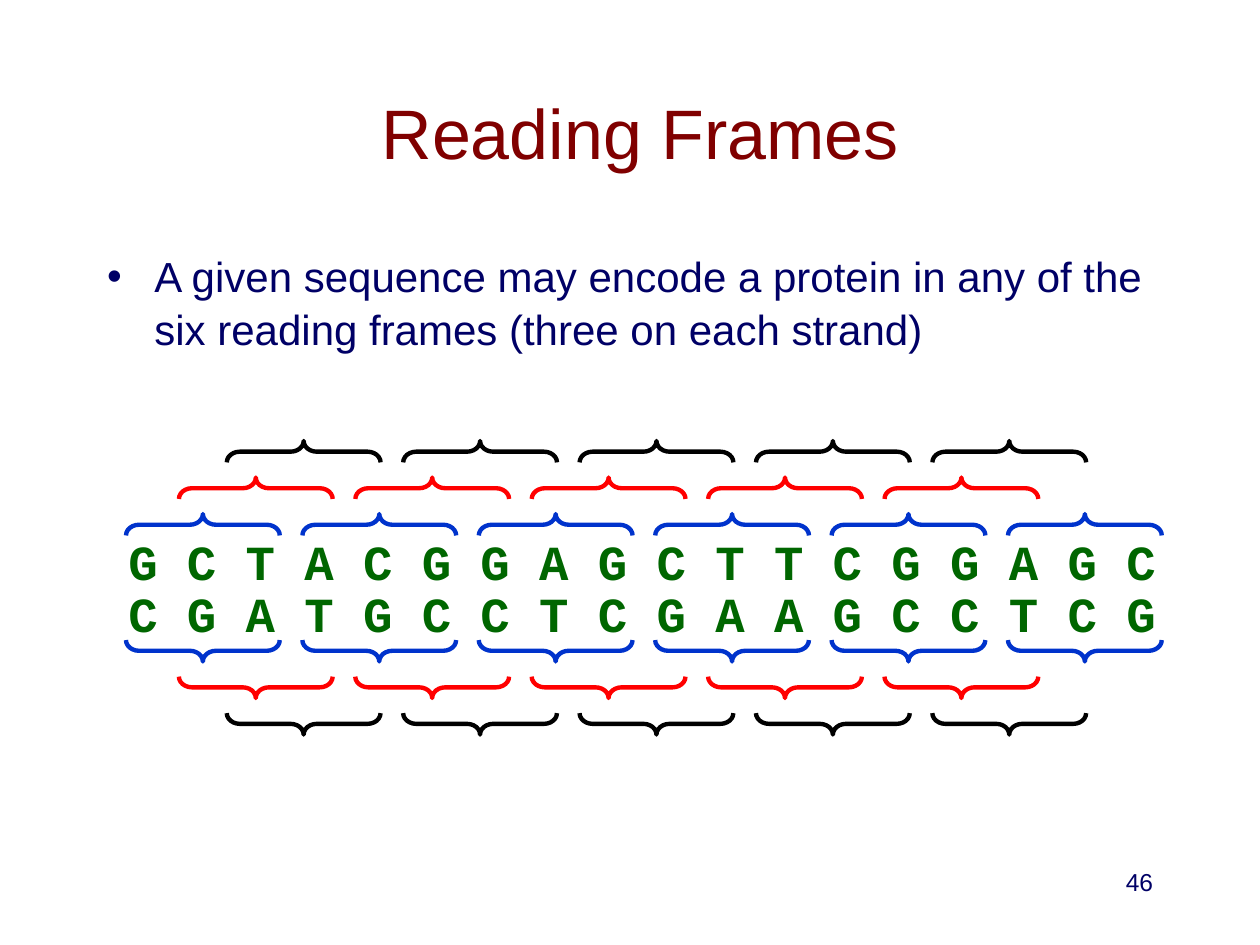
from collections import namedtuple
from pptx import Presentation
from pptx.dml.color import RGBColor
from pptx.enum.shapes import MSO_SHAPE
from pptx.enum.text import MSO_ANCHOR, MSO_AUTO_SIZE, PP_ALIGN
from pptx.util import Inches, Pt

Box = namedtuple("Box", "left top width height")
Frame = namedtuple("Frame", "color offset count")

COLORS = {
    "title": "800000",
    "body": "000066",
    "bases": "006600",
    "first": "0033CC",
    "second": "FF0000",
    "third": "000000",
}
STRANDS = ["G C T A C G G A G C T T C G G A G C", "C G A T G C C T C G A A G C C T C G"]
STRAND_GAP = 0.41
CODON_WIDTH = 1.4
FRAMES = [Frame("first", 0, 6), Frame("second", 0.42, 5), Frame("third", 0.8, 5)]
FRAME_GAP = 0.29
BRACE_LENGTH = 1.22
BRACE_DEPTH = 0.17


def place(shape, box):
    shape.left, shape.top, shape.width, shape.height = map(Inches, box)


def write_text(shape, text, size, color, font="Arial", bold=False, align=PP_ALIGN.LEFT,
               anchor=MSO_ANCHOR.TOP, wrap=True, line_spacing=None):
    frame = shape.text_frame
    frame.auto_size = MSO_AUTO_SIZE.NONE
    frame.word_wrap = wrap
    frame.vertical_anchor = anchor
    paragraph = frame.paragraphs[0]
    paragraph.alignment = align
    paragraph.line_spacing = line_spacing
    run = paragraph.add_run()
    run.text = text
    run.font.size = Pt(size)
    run.font.name = font
    run.font.bold = bold
    run.font.color.rgb = RGBColor.from_string(COLORS[color])


def fill_title(slide, box):
    place(slide.shapes.title, box)
    write_text(slide.shapes.title, "Reading Frames", 40, "title",
               align=PP_ALIGN.CENTER, anchor=MSO_ANCHOR.MIDDLE)


def fill_body(slide, box):
    body = slide.placeholders[1]
    place(body, box)
    write_text(body, "A given sequence may encode a protein in any of the six reading frames "
               "(three on each strand)", 24, "body", line_spacing=1.05)


def add_brace(group, center_x, center_y, rotation, color):
    brace = group.shapes.add_shape(
        MSO_SHAPE.LEFT_BRACE,
        Inches(center_x - BRACE_DEPTH / 2), Inches(center_y - BRACE_LENGTH / 2),
        Inches(BRACE_DEPTH), Inches(BRACE_LENGTH))
    brace.rotation = rotation
    brace.adjustments[0] = 0.608
    brace.shadow.inherit = False
    brace.fill.background()
    brace.line.color.rgb = RGBColor.from_string(COLORS[color])
    brace.line.width = Pt(2.5)


def add_sequence(slide, box):
    group = slide.shapes.add_group_shape()
    strands_top = box.top + 0.67
    for row, bases in enumerate(STRANDS):
        strand = group.shapes.add_textbox(
            Inches(box.left), Inches(strands_top + row * STRAND_GAP),
            Inches(box.width), Inches(0.57))
        write_text(strand, bases, 28, "bases", font="Courier New", bold=True, wrap=False)
    first_center = box.left + 0.69
    edges = [(box.top + BRACE_DEPTH / 2, 90, 1), (box.top + box.height - BRACE_DEPTH / 2, 270, -1)]
    for edge, rotation, direction in edges:
        for level, frame in enumerate(FRAMES):
            steps_inward = len(FRAMES) - 1 - level
            center_y = edge + direction * steps_inward * FRAME_GAP
            for codon in range(frame.count):
                center_x = first_center + frame.offset + codon * CODON_WIDTH
                add_brace(group, center_x, center_y, rotation, frame.color)


def add_slide_number(slide, box):
    number = slide.shapes.add_textbox(*map(Inches, box))
    write_text(number, "46", 14, "body", align=PP_ALIGN.RIGHT)


def main():
    presentation = Presentation()
    presentation.slide_width = Inches(10)
    presentation.slide_height = Inches(7.5)
    slide = presentation.slides.add_slide(presentation.slide_layouts[1])
    fill_title(slide, Box(0.83, 0.42, 8.5, 1.25))
    fill_body(slide, Box(0.75, 1.92, 8.5, 4.5))
    add_sequence(slide, Box(0.92, 3.5, 8.37, 2.33))
    add_slide_number(slide, Box(7.17, 6.83, 2.08, 0.5))
    presentation.save("out.pptx")


if __name__ == "__main__":
    main()
